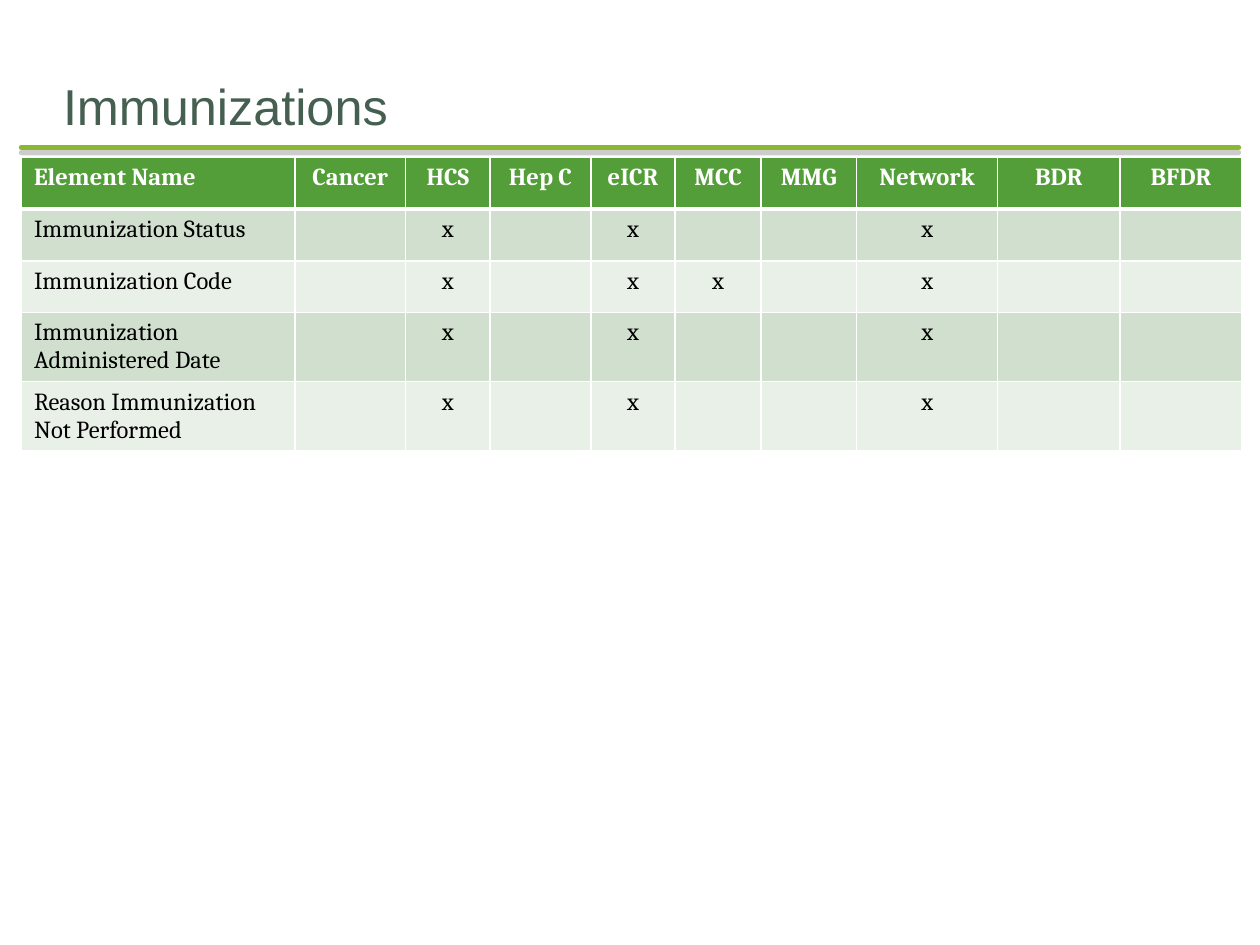
import pptx
import pptx.dml.color
import pptx.enum.shapes
import pptx.enum.text
import pptx.oxml
import pptx.oxml.ns
import pptx.util
from pptx.util import Inches

COLORS = {
    "title": "455F51", "rule": "8AB833", "shadow": "808080",
    "header": "549E39", "odd": "D1DFCE", "even": "E9F0E8",
    "white": "FFFFFF", "black": "000000",
}
NAMESPACE = pptx.oxml.ns.nsdecls("a")

HEADERS = ["Element Name", "Cancer", "HCS", "Hep C", "eICR", "MCC", "MMG",
           "Network", "BDR", "BFDR"]
COLUMN_WIDTHS = [2.17, 0.88, 0.67, 0.8, 0.67, 0.68, 0.76, 1.12, 0.97, 0.97]
ROW_HEIGHTS = [0.41, 0.41, 0.41, 0.55, 0.55]
COMMON_USERS = {"HCS", "eICR", "Network"}
ELEMENTS = {
    "Immunization Status": COMMON_USERS,
    "Immunization Code": COMMON_USERS | {"MCC"},
    "Immunization Administered Date": COMMON_USERS,
    "Reason Immunization Not Performed": COMMON_USERS,
}


def rgb(name):
    return pptx.dml.color.RGBColor.from_string(COLORS[name])


class SlideBuilder:
    """Holds the text style and the current slide."""

    title_style = {"name": "Arial", "size": pptx.util.Pt(28.8), "bold": False}
    cell_style = {"name": "Cambria", "size": pptx.util.Pt(14)}

    def __init__(self, page):
        self.page = page

    def add_text(self, para, text, style, color):
        span = para.add_run()
        span.text = text
        for name, value in style.items():
            setattr(span.font, name, value)
        span.font.color.rgb = rgb(color)

    def title(self, text, left, top, width, height):
        box = self.page.shapes.title
        place = {"left": left, "top": top, "width": width, "height": height}
        for name, value in place.items():
            setattr(box, name, Inches(value))
        frame_format = {
            "margin_left": 0, "margin_right": 0, "margin_bottom": 0,
            "margin_top": Inches(0.05), "word_wrap": True,
            "vertical_anchor": pptx.enum.text.MSO_ANCHOR.BOTTOM,
            "auto_size": pptx.enum.text.MSO_AUTO_SIZE.NONE,
        }
        for name, value in frame_format.items():
            setattr(box.text_frame, name, value)
        para = box.text_frame.paragraphs[0]
        para.alignment = pptx.enum.text.PP_ALIGN.LEFT
        self.add_text(para, text, self.title_style, "title")

    def rule(self, left, right, top):
        line = self.page.shapes.add_connector(
            pptx.enum.shapes.MSO_CONNECTOR.STRAIGHT,
            Inches(left), Inches(top), Inches(right), Inches(top))
        line.line.color.rgb = rgb("rule")
        line.line.width = pptx.util.Pt(3)
        outline = line._element.spPr.find(pptx.oxml.ns.qn("a:ln"))
        outline.set("cap", "rnd")
        line._element.spPr.append(pptx.oxml.parse_xml(
            f'<a:effectLst {NAMESPACE}>'
            '<a:outerShdw dist="38100" dir="5400000" rotWithShape="0">'
            f'<a:srgbClr val="{COLORS["shadow"]}"><a:alpha val="40000"/>'
            '</a:srgbClr></a:outerShdw></a:effectLst>'))

    def borders(self, cell, bottom):
        properties = cell._tc.get_or_add_tcPr()
        for side, points in {"L": 1, "R": 1, "T": 1, "B": bottom}.items():
            properties.append(pptx.oxml.parse_xml(
                f'<a:ln{side} {NAMESPACE} w="{pptx.util.Pt(points)}">'
                f'<a:solidFill><a:srgbClr val="{COLORS["white"]}"/>'
                f'</a:solidFill></a:ln{side}>'))

    def cell(self, cell, text, fill, is_header, is_label):
        self.borders(cell, 3 if is_header else 1)
        cell.fill.solid()
        cell.fill.fore_color.rgb = rgb(fill)
        if not text:
            return
        para = cell.text_frame.paragraphs[0]
        if not is_label:
            para.alignment = pptx.enum.text.PP_ALIGN.CENTER
        self.add_text(para, text, {**self.cell_style, "bold": is_header},
                      "white" if is_header else "black")

    def table(self, rows, left, top, widths, heights):
        grid = self.page.shapes.add_table(
            len(rows), len(widths), Inches(left), Inches(top),
            Inches(sum(widths)), Inches(sum(heights))).table
        for column, width in zip(grid.columns, widths):
            column.width = Inches(width)
        for index, (row, height) in enumerate(zip(rows, heights)):
            grid.rows[index].height = Inches(height)
            fill = "header" if index == 0 else ("even", "odd")[index % 2]
            for position, text in enumerate(row):
                self.cell(grid.cell(index, position), text, fill,
                          index == 0, position == 0)


def main():
    deck = pptx.Presentation()
    deck.slide_width, deck.slide_height = Inches(10), Inches(7.5)
    builder = SlideBuilder(deck.slides.add_slide(deck.slide_layouts[5]))

    # Heading with its rule
    builder.rule(0.17, 9.83, 1.17)
    builder.title("Immunizations", 0.5, 0.5, 9, 0.58)

    # Which program uses which data element
    rows = [HEADERS] + [
        [element] + ["x" if name in users else "" for name in HEADERS[1:]]
        for element, users in ELEMENTS.items()]
    builder.table(rows, 0.17, 1.25, COLUMN_WIDTHS, ROW_HEIGHTS)

    deck.save("out.pptx")


if __name__ == "__main__":
    main()
